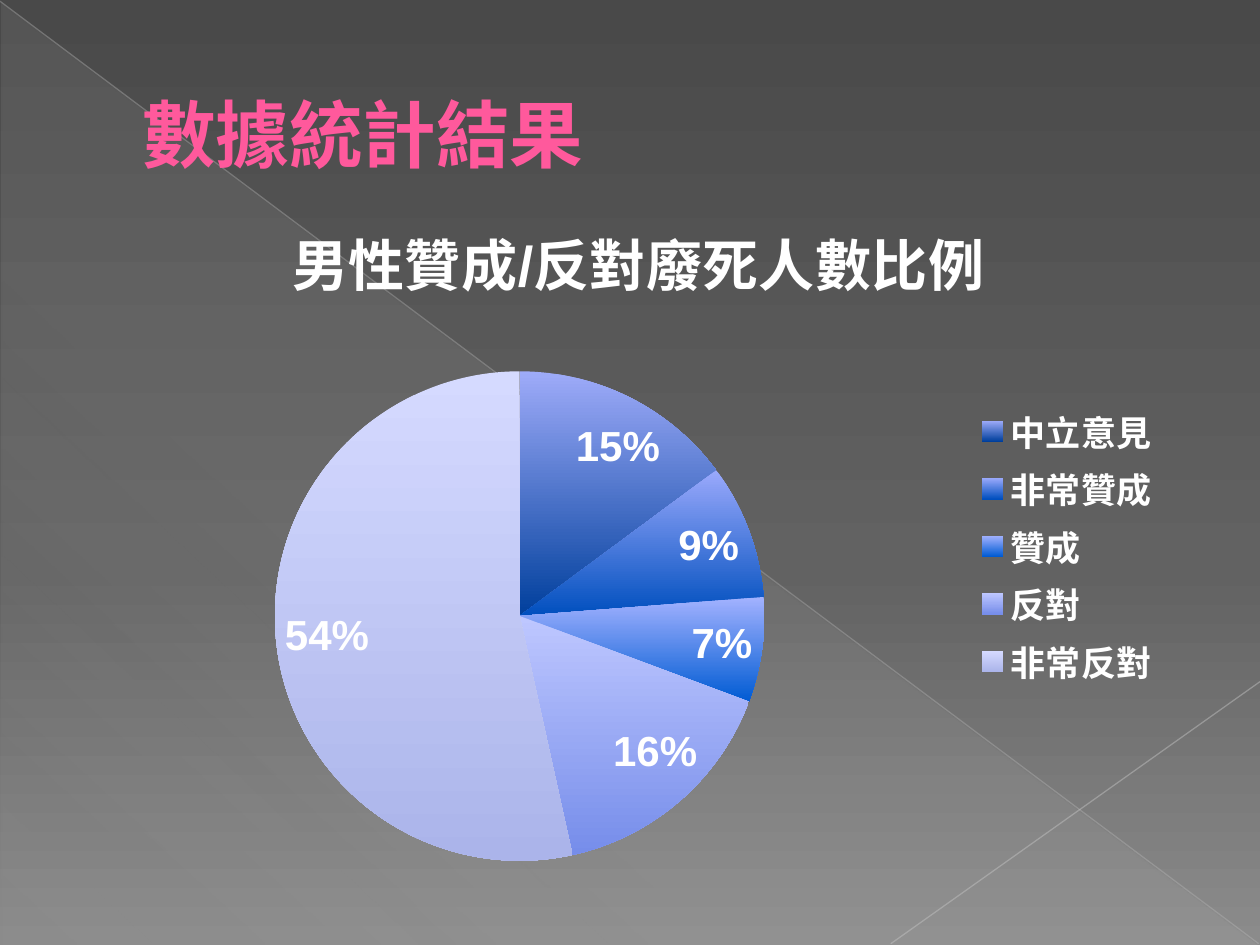
import pptx
import pptx.chart.data
import pptx.dml.color
import pptx.enum.chart
import pptx.enum.shapes
import pptx.enum.text
import pptx.oxml
import pptx.oxml.ns
import pptx.util
from dataclasses import dataclass

Inches = pptx.util.Inches
qn = pptx.oxml.ns.qn


@dataclass(frozen=True)
class Theme:
    head: str = "FF599C"
    text: str = "FFFFFF"
    head_font: str = "TeX Gyre Adventor"
    font: str = "Arial"
    head_size: int = 42
    title_size: int = 32
    label_size: int = 24
    key_size: int = 20
    # Gradient stops: position, colour, opacity in percent
    back: tuple = ((0, "494949", 100), (60, "626262", 100), (100, "8B8B8B", 100))
    veil: tuple = ((0, "D2D2D2", 10), (70, "D2D2D2", 8), (100, "D2D2D2", 1))
    # Top and bottom colour of each slice
    slices: tuple = (("9EABF9", "003F9C"), ("9AA9FC", "004FBE"),
                     ("A3B2FF", "005BD3"), ("BEC7FF", "768DEA"),
                     ("D5DAFF", "ABB4EA"))


THEME = Theme()


def paint(fill, stops, angle):
    """Give a fill a linear gradient with any number of stops."""
    fill.gradient()
    fill.gradient_angle = 0
    grad = fill._fill._gradFill
    listing = grad.find(qn("a:gsLst"))
    for old in list(listing):
        listing.remove(old)
    for place, color, alpha in stops:
        listing.append(pptx.oxml.parse_xml(
            f'<a:gs {pptx.oxml.ns.nsdecls("a")} pos="{place * 1000}">'
            f'<a:srgbClr val="{color}"><a:alpha val="{alpha * 1000}"/>'
            '</a:srgbClr></a:gs>'))
    grad.find(qn("a:lin")).set("ang", str(angle * 60000))


def style(font, size, color, name):
    font.size = pptx.util.Pt(size)
    font.bold = True
    font.name = name
    font.color.rgb = pptx.dml.color.RGBColor.from_string(color)


def layout(parent, before, x, y, w=None, h=None):
    """Place a chart part by fractions of the chart's box."""
    for old in parent.findall(qn("c:layout")):
        parent.remove(old)
    rows = '<c:layoutTarget val="inner"/>' if parent.tag == qn("c:plotArea") else ""
    rows += '<c:xMode val="edge"/><c:yMode val="edge"/>'
    for key, value in zip("xywh", (x, y, w, h)):
        if value is not None:
            rows += f'<c:{key} val="{value}"/>'
    node = pptx.oxml.parse_xml(
        f'<c:layout {pptx.oxml.ns.nsdecls("c")}>'
        f'<c:manualLayout>{rows}</c:manualLayout></c:layout>')
    if before is None:
        parent.insert(0, node)
    else:
        parent.find(qn(before)).addnext(node)


def ray(slide, start, end, color, alpha):
    line = slide.shapes.add_connector(
        pptx.enum.shapes.MSO_CONNECTOR.STRAIGHT,
        *map(Inches, start + end))
    line.line.width = pptx.util.Pt(0.75)
    line.line.color.rgb = pptx.dml.color.RGBColor.from_string(color)
    props = line._element.spPr
    tint = next(props.iter(qn("a:srgbClr")))
    tint.append(pptx.oxml.parse_xml(
        f'<a:alpha {pptx.oxml.ns.nsdecls("a")} val="{alpha * 1000}"/>'))
    props.append(pptx.oxml.parse_xml(
        f'<a:effectLst {pptx.oxml.ns.nsdecls("a")}/>'))


def decor(slide, x, y, w, h):
    # Gradient backdrop
    paint(slide.background.fill, THEME.back, 90)
    # Translucent triangle
    veil = slide.shapes.add_shape(
        pptx.enum.shapes.MSO_SHAPE.RIGHT_TRIANGLE,
        *map(Inches, (x + 0.01, y + 0.02, w - 0.02, h - 0.02)))
    veil.shadow.inherit = False
    veil.line.fill.background()
    paint(veil.fill, THEME.veil, 133)
    # Crossing lines
    ray(slide, (x, y + 0.01), (x + w - 0.01, y + h - 0.01), "BEBEBE", 35)
    ray(slide, (x + w, y + 5.41), (x + 7.07, y + h - 0.01), "C5C5C5", 45)


def head(slide, text, x, y, w, h):
    title = slide.shapes.title
    slide.shapes._spTree.append(title._element)  # in front of the decor
    title.left, title.top, title.width, title.height = map(Inches, (x, y, w, h))
    frame = title.text_frame
    frame.word_wrap = True
    frame.vertical_anchor = pptx.enum.text.MSO_ANCHOR.MIDDLE
    frame.margin_left = frame.margin_right = Inches(0.1)
    frame.margin_top = frame.margin_bottom = Inches(0.1)
    para = frame.paragraphs[0]
    para.alignment = pptx.enum.text.PP_ALIGN.LEFT
    para._p.get_or_add_pPr().set("marL", str(Inches(0.53)))
    run = para.add_run()
    run.text = text
    style(run.font, THEME.head_size, THEME.head, THEME.head_font)


def pie(slide, text, shares, x, y, w, h):
    data = pptx.chart.data.CategoryChartData()
    data.categories = list(shares)
    data.add_series("Series 1", list(shares.values()))
    chart = slide.shapes.add_chart(
        pptx.enum.chart.XL_CHART_TYPE.PIE,
        *map(Inches, (x, y, w, h)), data).chart
    chart.font.name = THEME.font
    chart.font.size = pptx.util.Pt(18)

    # Chart title
    chart.has_title = True
    run = chart.chart_title.text_frame.paragraphs[0].add_run()
    run.text = text
    style(run.font, THEME.title_size, THEME.text, THEME.font)
    layout(chart.chart_title._element, "c:tx", 0.14, 0.01)

    # Legend
    chart.has_legend = True
    key = chart.legend
    key.position = pptx.enum.chart.XL_LEGEND_POSITION.RIGHT
    key.include_in_layout = False
    style(key.font, THEME.key_size, THEME.text, THEME.font)
    layout(key._element, "c:legendPos", 0.8, 0.29, 0.2, 0.42)

    # Slices and their labels; the rounded shares add up to 101,
    # so each label shows its value with a percent sign
    plot = chart.plots[0]
    plot.vary_by_categories = True
    layout(chart._chartSpace.chart.plotArea, None, 0.13, 0.25, 0.48, 0.7)
    for i, (top, base) in enumerate(THEME.slices):
        form = plot.series[0].points[i].format
        paint(form.fill, ((0, top, 100), (100, base, 100)), 90)
        form.line.fill.background()
    plot.has_data_labels = True
    labels = plot.data_labels
    labels.show_percentage = False
    labels.show_value = True
    labels.number_format = '0"%"'
    labels.number_format_is_linked = False
    labels.position = pptx.enum.chart.XL_LABEL_POSITION.BEST_FIT
    style(labels.font, THEME.label_size, THEME.text, THEME.font)


def main():
    deck = pptx.Presentation()
    deck.slide_width, deck.slide_height = Inches(10), Inches(7.5)
    slide = deck.slides.add_slide(deck.slide_layouts[5])
    decor(slide, 0, 0, 10, 7.5)
    head(slide, "數據統計結果", 0.5, 0.29, 9, 1.53)
    shares = {"中立意見": 15, "非常贊成": 9, "贊成": 7, "反對": 16, "非常反對": 54}
    pie(slide, "男性贊成/反對廢死人數比例", shares, 1.09, 1.56, 8.2, 5.55)
    deck.save("out.pptx")


if __name__ == "__main__":
    main()
